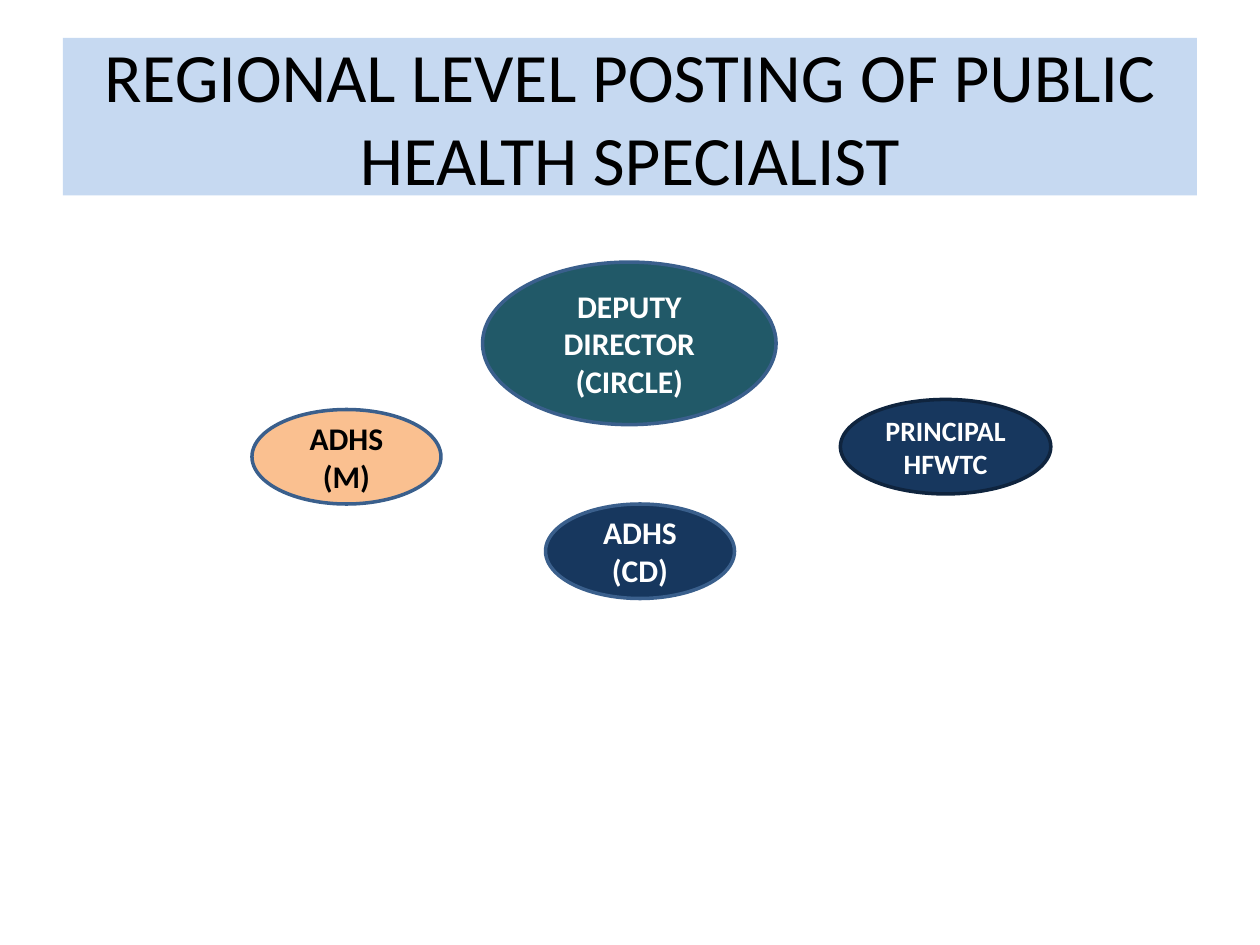
"""Build a slide on regional postings of public health specialists."""
from pptx import Presentation
from pptx.dml.color import RGBColor
from pptx.enum.shapes import MSO_SHAPE
from pptx.enum.text import MSO_ANCHOR, PP_ALIGN
from pptx.util import Inches, Pt

RECT, OVAL = MSO_SHAPE.RECTANGLE, MSO_SHAPE.OVAL
MIDDLE, CENTER = MSO_ANCHOR.MIDDLE, PP_ALIGN.CENTER
BLUE, NAVY, WHITE, BLACK = "3A5F8C", "17375E", "FFFFFF", "000000"


def paint(color, code):
    color.rgb = RGBColor.from_string(code)


def add_box(kind, area, text, size, fill, ink, edge=None):
    box = slide.shapes.add_shape(kind, *[Inches(n) for n in area])
    box.shadow.inherit = False
    box.fill.solid()
    paint(box.fill.fore_color, fill)
    if edge:
        paint(box.line.color, edge)
        box.line.width = Pt(2)
    else:
        box.line.fill.background()
    frame = box.text_frame
    frame.word_wrap = True
    frame.vertical_anchor = MIDDLE
    para = frame.paragraphs[0]
    para.text = text
    para.alignment = CENTER
    para.font.name = "Calibri"
    para.font.size = Pt(size)
    para.font.bold = kind == OVAL
    paint(para.font.color, ink)


deck = Presentation()
deck.slide_width, deck.slide_height = Inches(10), Inches(7.5)
slide = deck.slides.add_slide(deck.slide_layouts[6])

add_box(RECT, (0.5, 0.3, 9, 1.25),
        "REGIONAL LEVEL POSTING OF PUBLIC HEALTH SPECIALIST",
        39.6, "C6D9F1", BLACK)

posts = [
    ((2, 3.25, 1.5, 0.75), "ADHS (M)", 18, "FAC090", BLACK, BLUE),
    ((4.33, 4, 1.5, 0.75), "ADHS (CD)", 18, NAVY, WHITE, BLUE),
    ((6.67, 3.17, 1.67, 0.75), "PRINCIPAL HFWTC", 16, NAVY, WHITE, "0F243E"),
    ((3.83, 2.08, 2.33, 1.29), "DEPUTY DIRECTOR (CIRCLE)", 18, "215968",
     WHITE, BLUE),
]
for post in posts:
    add_box(OVAL, *post)

deck.save("out.pptx")
